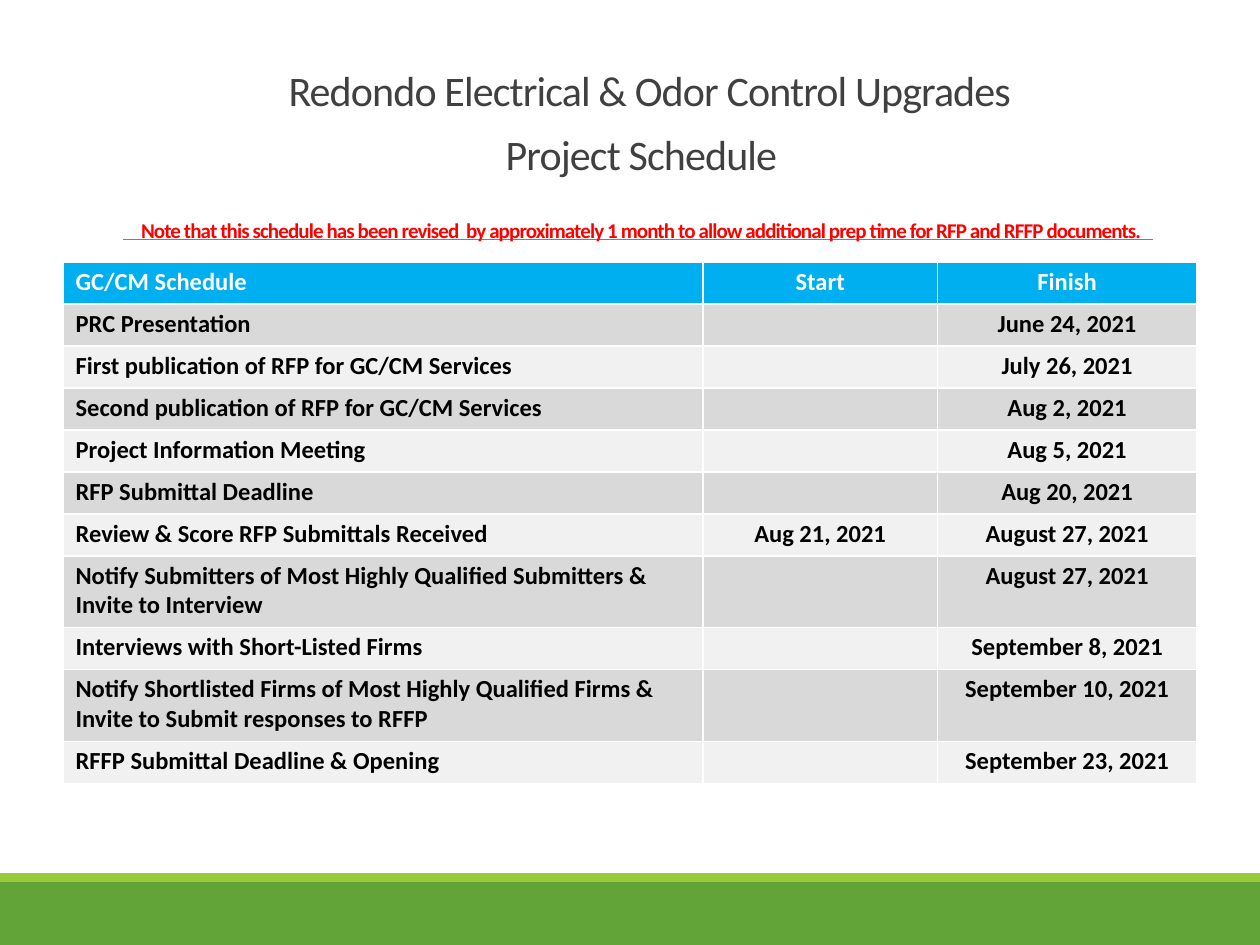
"""Build the project schedule slide with its title, note and date table."""
from dataclasses import dataclass

from lxml import etree
from pptx import Presentation
from pptx import util as u
from pptx.dml.color import RGBColor
from pptx.enum import shapes, text
from pptx.oxml.ns import qn


@dataclass
class Theme:
    font: str = "Calibri"
    green: str = "62A437"
    lime: str = "99CA38"
    rule: str = "7E7E7E"
    title: str = "404040"
    note: str = "FF0000"
    head: str = "00AFEF"
    dark: str = "D9D9D9"
    light: str = "F1F1F1"
    white: str = "FFFFFF"
    ink: str = "000000"
    big: int = 24
    cell: int = 14
    small: int = 12


def paint(fill, color):
    fill.solid()
    fill.fore_color.rgb = RGBColor.from_string(color)


def frame(cell, color):
    props = cell._tc.get_or_add_tcPr()
    for pos, side in enumerate(("lnL", "lnR", "lnT", "lnB")):
        line = etree.Element(qn(f"a:{side}"), w=str(u.Pt(1)))
        solid = etree.SubElement(line, qn("a:solidFill"))
        etree.SubElement(solid, qn("a:srgbClr"), val=color)
        props.insert(pos, line)


theme = Theme()
center = text.PP_ALIGN.CENTER
prs = Presentation()
prs.slide_width, prs.slide_height = u.Inches(10), u.Inches(7.5)
slide = prs.slides.add_slide(prs.slide_layouts[5])
tree = slide.shapes

for top, height, color in ((7, 0.5, theme.green), (6.93, 0.07, theme.lime)):
    band = tree.add_shape(shapes.MSO_SHAPE.RECTANGLE, u.Inches(0), u.Inches(top),
                          u.Inches(10), u.Inches(height))
    band.shadow.inherit = False
    paint(band.fill, color)
    band.line.fill.background()

rule = tree.add_connector(shapes.MSO_CONNECTOR.STRAIGHT, u.Inches(0.98), u.Inches(1.9),
                          u.Inches(9.15), u.Inches(1.9))
rule.line.color.rgb = RGBColor.from_string(theme.rule)
rule.line.width = u.Pt(0.48)
etree.SubElement(rule._element.spPr, qn("a:effectLst"))

title = tree.title
tree._spTree.append(title._element)
title.left, title.top = u.Inches(1), u.Inches(0.29)
title.width, title.height = u.Inches(8.17), u.Inches(1.62)
body = title.text_frame
body.word_wrap = True
body.auto_size = text.MSO_AUTO_SIZE.NONE
body.vertical_anchor = text.MSO_ANCHOR.TOP
body.margin_left = body.margin_right = body.margin_bottom = 0
body.margin_top = u.Inches(0.11)
para = body.paragraphs[0]
para.alignment = center
para.line_spacing = u.Pt(36.7)
para.space_before = u.Pt(7.6)
para.font.name = theme.font
indent = para._p.get_or_add_pPr()
indent.set("marL", str(u.Inches(0.01)))
indent.set("indent", str(u.Inches(0.2)))
lines = (
    ("Redondo Electrical & Odor Control Upgrades ", theme.big, theme.title, False),
    ("Project Schedule", theme.big, theme.title, False),
    ("Note that this schedule has been revised  by approximately 1 month to allow "
     "additional prep time for RFP and RFFP documents.", theme.small, theme.note, True),
)
for pos, (words, size, color, bold) in enumerate(lines):
    if pos:
        para.add_line_break()
    run = para.add_run()
    run.text = words
    run.font.size = u.Pt(size)
    run.font.bold = bold
    run.font.color.rgb = RGBColor.from_string(color)
    run.font._element.set("spc", "-50")

rows = (
    ("GC/CM Schedule", "Start", "Finish"),
    ("PRC Presentation", "", "June 24, 2021"),
    ("First publication of RFP for GC/CM Services", "", "July 26, 2021"),
    ("Second publication of RFP for GC/CM Services", "", "Aug 2, 2021"),
    ("Project Information Meeting", "", "Aug 5, 2021"),
    ("RFP Submittal Deadline", "", "Aug 20, 2021"),
    ("Review & Score RFP Submittals Received", "Aug 21, 2021", "August 27, 2021"),
    ("Notify Submitters of Most Highly Qualified Submitters & Invite to Interview",
     "", "August 27, 2021"),
    ("Interviews with Short-Listed Firms", "", "September 8, 2021"),
    ("Notify Shortlisted Firms of Most Highly Qualified Firms & "
     "Invite to Submit responses to RFFP", "", "September 10, 2021"),
    ("RFFP Submittal Deadline & Opening", "", "September 23, 2021"),
)
widths = (5.08, 1.86, 2.06)
full, tall = 4.14, 0.57
double = (7, 9)
short = (full - tall * len(double)) / (len(rows) - len(double))
grid = tree.add_table(len(rows), len(widths), u.Inches(0.5), u.Inches(2.08),
                      u.Inches(sum(widths)), u.Inches(full)).table
for col, width in zip(grid.columns, widths):
    col.width = u.Inches(width)
for r, row in enumerate(rows):
    grid.rows[r].height = u.Inches(tall if r in double else short)
    fill = theme.dark if r % 2 else theme.light
    for c, words in enumerate(row):
        cell = grid.cell(r, c)
        cell.margin_left = u.Inches(0 if c else 0.1)
        cell.margin_right = cell.margin_bottom = 0
        cell.margin_top = u.Inches(0.04)
        paint(cell.fill, fill if r else theme.head)
        frame(cell, theme.white)
        para = cell.text_frame.paragraphs[0]
        para.text = words
        para.alignment = center if c else text.PP_ALIGN.LEFT
        para.space_before = u.Pt(2.6)
        para.font.name = theme.font
        para.font.size = u.Pt(theme.cell)
        para.font.bold = True
        para.font.color.rgb = RGBColor.from_string(theme.ink if r else theme.white)

prs.save("out.pptx")
